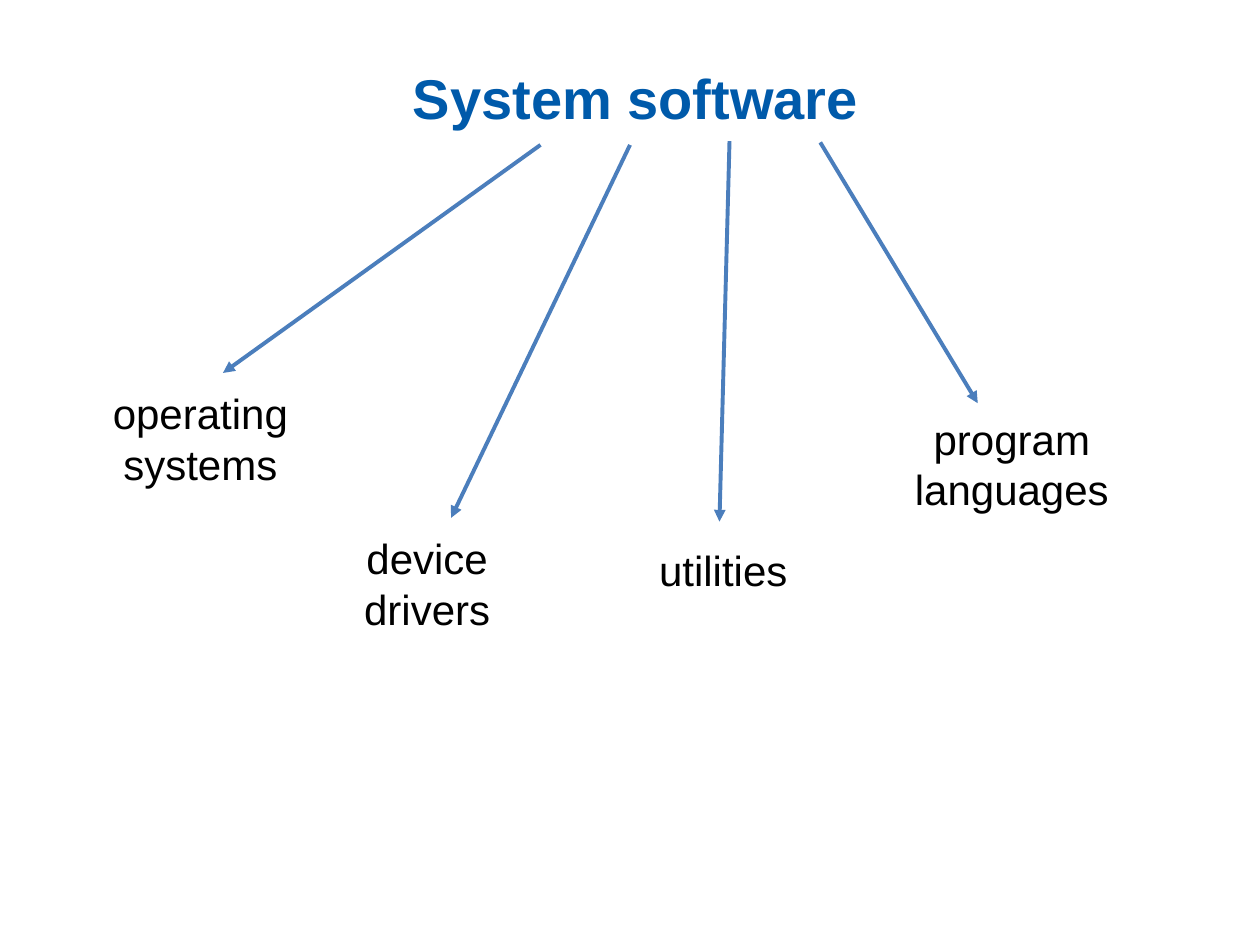
from typing import NamedTuple

from lxml import etree
from pptx import Presentation
from pptx.dml.color import RGBColor
from pptx.enum.shapes import MSO_CONNECTOR
from pptx.enum.text import MSO_ANCHOR, PP_ALIGN
from pptx.oxml.ns import qn
from pptx.slide import Slide
from pptx.util import Inches, Pt

COLORS = {"title": "005AAA", "label": "000000", "arrow": "4B7EBC"}
FONT = "Arial"
LABEL_WIDTH = 1.98


class Category(NamedTuple):
    label: str
    left: float
    top: float
    height: float
    arrow_start: tuple[float, float]
    arrow_end: tuple[float, float]


CATEGORIES = [
    Category("operating systems", 0.6, 3.03, 0.91, (4.29, 1.15), (1.77, 2.96)),
    Category("device drivers", 2.4, 4.18, 0.91, (5, 1.15), (3.58, 4.11)),
    Category("utilities", 4.75, 4.27, 0.5, (5.79, 1.12), (5.71, 4.14)),
    Category("program languages", 7.04, 3.23, 0.91, (6.51, 1.13), (7.76, 3.2)),
]


def add_text(slide: Slide, text: str, left: float, top: float, width: float,
             height: float, size: int, color: str, bold: bool = False):
    """Add a centred, wrapping text box and return its text frame."""
    box = slide.shapes.add_textbox(
        Inches(left), Inches(top), Inches(width), Inches(height))
    frame = box.text_frame
    frame.word_wrap = True
    paragraph = frame.paragraphs[0]
    paragraph.alignment = PP_ALIGN.CENTER
    run = paragraph.add_run()
    run.text = text
    run.font.name = FONT
    run.font.size = Pt(size)
    run.font.bold = bold
    run.font.color.rgb = RGBColor.from_string(COLORS[color])
    return frame


def add_title(slide: Slide, text: str) -> None:
    frame = add_text(slide, text, 0.05, 0, 9.99, 1.39, 32, "title", bold=True)
    frame.vertical_anchor = MSO_ANCHOR.MIDDLE
    frame.margin_top = Inches(0.2)


def add_arrow(slide: Slide, start: tuple[float, float],
              end: tuple[float, float]) -> None:
    arrow = slide.shapes.add_connector(
        MSO_CONNECTOR.STRAIGHT, *map(Inches, start + end))
    arrow.line.color.rgb = RGBColor.from_string(COLORS["arrow"])
    arrow.line.width = Pt(2.25)
    etree.SubElement(arrow.line._get_or_add_ln(), qn("a:tailEnd"), type="triangle")
    etree.SubElement(arrow._element.spPr, qn("a:effectLst"))


def main() -> None:
    presentation = Presentation()
    presentation.slide_width = Inches(10)
    presentation.slide_height = Inches(7.5)
    slide = presentation.slides.add_slide(presentation.slide_layouts[6])

    add_title(slide, "System software")
    for category in CATEGORIES:
        add_arrow(slide, category.arrow_start, category.arrow_end)
        add_text(slide, category.label, category.left, category.top,
                 LABEL_WIDTH, category.height, 24, "label")

    presentation.save("out.pptx")


if __name__ == "__main__":
    main()
